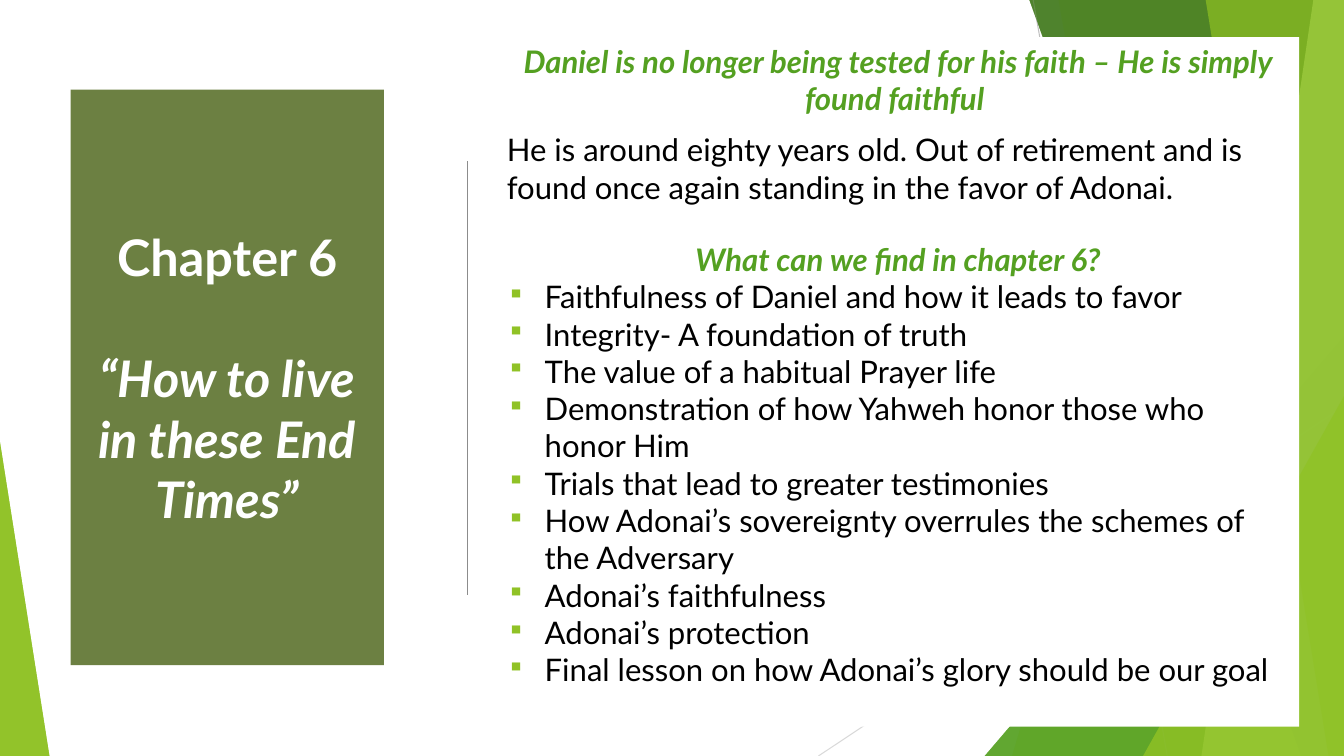
from lxml.etree import SubElement
from pptx import Presentation
from pptx.dml.color import RGBColor
from pptx.enum.shapes import MSO_CONNECTOR, MSO_SHAPE
from pptx.enum.text import MSO_ANCHOR, PP_ALIGN
from pptx.oxml.ns import qn
from pptx.util import Pt

WIDTH, HEIGHT = 960, 540
FACET_TOP = -0.6
FONT = "Lato"
COLORS = {
    "lime": "90C226",
    "green": "54A021",
    "forest": "3F7819",
    "pale": "C0E474",
    "olive": "486113",
    "white": "FFFFFF",
    "black": "000000",
    "silver": "BFBFBF",
    "mist": "D9D9D9",
    "gray": "8C8C8C",
}

FACETS = [
    ("slice", (884.2, 722.9), "lime", 30),
    ("slice", (756, 851.8), "lime", 20),
    ("triangle", (703.4, 239.8, 256.6, 1), "green", 72),
    ("slice", (735.1, 929.5), "forest", 70),
    ("slice", (938.2, 858.2), "pale", 70),
    ("slice", (861.1, 949), "lime", 65),
    ("triangle", (816.5, 283, 143.5, 1), "lime", 80),
    ("triangle", (0, 316, 35.3, 0), "lime", 85),
]
RAYS = [
    ((738, 0, 833.8, 540), "silver"),
    ((960, 290.2, 584.6, 540), "mist"),
]
DIVIDER = (334, 115.2, 334, 424.8)

TITLE_AREA = (50.4, 64.1, 223.9, 411.1)
TITLE = ["Chapter 6", "“How to live in these End Times”"]

BODY_AREA = (355, 26.6, 573, 492.5)
HEADLINE = "Daniel is no longer being tested for his faith – He is simply found faithful "
INTRO = (
    "He is around eighty years old. Out of retirement and is found once again "
    "standing in the favor of Adonai."
)
QUESTION = "What can we find in chapter 6?"
FINDINGS = [
    "Faithfulness of Daniel and how it leads to favor",
    "Integrity- A foundation of truth",
    "The value of a habitual Prayer life",
    "Demonstration of how Yahweh honor those who honor Him",
    "Trials that lead to greater testimonies",
    "How Adonai’s sovereignty overrules the schemes of the Adversary",
    "Adonai’s faithfulness",
    "Adonai’s protection",
    "Final lesson on how Adonai’s glory should be our goal",
]


def rgb(name):
    return RGBColor.from_string(COLORS[name])


def paint(shape, color, opacity=100):
    shape.shadow.inherit = False
    shape.fill.solid()
    shape.fill.fore_color.rgb = rgb(color)
    shape.line.fill.background()
    if opacity < 100:
        tint = shape.fill._xPr.find(qn("a:solidFill"))[0]
        SubElement(tint, qn("a:alpha"), val=str(opacity * 1000))


def add_facets(page):
    for kind, geometry, color, opacity in FACETS:
        if kind == "slice":
            top_x, bottom_x = geometry
            outline = page.shapes.build_freeform(Pt(top_x), Pt(FACET_TOP))
            corners = [(WIDTH, FACET_TOP), (WIDTH, HEIGHT), (bottom_x, HEIGHT)]
            outline.add_line_segments([(Pt(x), Pt(y)) for x, y in corners])
            facet = outline.convert_to_shape()
        else:
            left, top, width, apex = geometry
            facet = page.shapes.add_shape(
                MSO_SHAPE.ISOSCELES_TRIANGLE,
                Pt(left), Pt(top), Pt(width), Pt(HEIGHT - top),
            )
            facet.adjustments[0] = apex
        paint(facet, color, opacity)


def add_line(page, ends, color, weight=0.75):
    line = page.shapes.add_connector(MSO_CONNECTOR.STRAIGHT, *map(Pt, ends))
    line.line.color.rgb = rgb(color)
    line.line.width = Pt(weight)
    SubElement(line._element.spPr, qn("a:effectLst"))


def add_panel(page, area, color, anchor, opacity=100):
    box = page.shapes.add_shape(MSO_SHAPE.RECTANGLE, *map(Pt, area))
    paint(box, color, opacity)
    box.text_frame.word_wrap = True
    box.text_frame.vertical_anchor = anchor
    return box.text_frame


def add_text(frame, text, size=22.2, color="black", bold=False, italic=False,
             align=PP_ALIGN.LEFT, before=0, level=0, bullet=None):
    para = frame.paragraphs[0] if not frame.text else frame.add_paragraph()
    para.alignment = align
    para.space_before = Pt(before)
    para.level = level
    indent = Pt(27) if bullet else 0
    properties = para._p.get_or_add_pPr()
    properties.set("marL", str(indent))
    properties.set("indent", str(-indent))
    if bullet:
        bullet_color = SubElement(properties, qn("a:buClr"))
        SubElement(bullet_color, qn("a:srgbClr"), val=COLORS["lime"])
        SubElement(properties, qn("a:buSzPct"), val="80000")
        SubElement(properties, qn("a:buChar"), char=bullet)
    span = para.add_run()
    span.text = text
    span.font.name = FONT
    span.font.size = Pt(size)
    span.font.bold = bold
    span.font.italic = italic
    span.font.color.rgb = rgb(color)


def main():
    deck = Presentation()
    deck.slide_width, deck.slide_height = Pt(WIDTH), Pt(HEIGHT)
    page = deck.slides.add_slide(deck.slide_layouts[6])

    add_facets(page)
    for ends, color in RAYS:
        add_line(page, ends, color)
    add_facets(page)
    add_line(page, DIVIDER, "gray")

    title = add_panel(page, TITLE_AREA, "olive", MSO_ANCHOR.MIDDLE, opacity=80)
    for index, text in enumerate(TITLE):
        add_text(title, text, size=36, color="white", bold=True, italic=index > 0,
                 align=PP_ALIGN.CENTER, before=43.2 * index)

    body = add_panel(page, BODY_AREA, "white", MSO_ANCHOR.TOP)
    heading = dict(color="green", bold=True, italic=True,
                   align=PP_ALIGN.CENTER, before=25)
    add_text(body, HEADLINE, **heading)
    add_text(body, INTRO, before=10, level=1)
    add_text(body, QUESTION, **heading)
    for finding in FINDINGS:
        add_text(body, finding, level=1, bullet="▪")

    deck.save("out.pptx")


if __name__ == "__main__":
    main()
